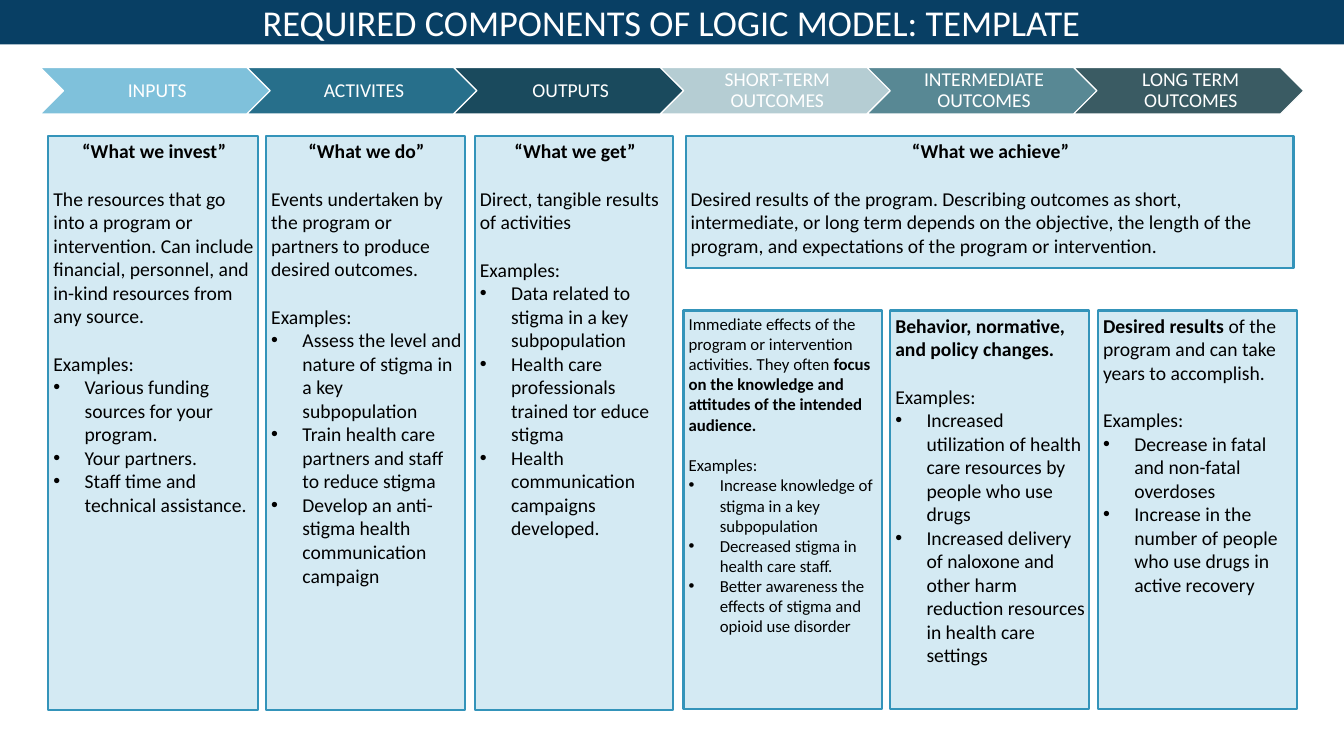
from lxml import etree
from pptx import Presentation
from pptx.dml.color import RGBColor
from pptx.enum.shapes import MSO_SHAPE
from pptx.enum.text import MSO_ANCHOR, PP_ALIGN
from pptx.oxml.ns import qn
from pptx.util import Inches, Pt

RECT, CHEVRON = MSO_SHAPE.RECTANGLE, MSO_SHAPE.CHEVRON
TOP, MIDDLE = MSO_ANCHOR.TOP, MSO_ANCHOR.MIDDLE
LEFT, CENTER = PP_ALIGN.LEFT, PP_ALIGN.CENTER

# Content
TITLE = "REQUIRED COMPONENTS OF LOGIC MODEL: TEMPLATE"
STEPS = [
    ("INPUTS", "7FC1DB"),
    ("ACTIVITES", "276F8B"),
    ("OUTPUTS", "1A4A5D"),
    ("SHORT-TERM OUTCOMES", "B5CDD3"),
    ("INTERMEDIATE OUTCOMES", "588894"),
    ("LONG TERM OUTCOMES", "3A5B63"),
]
# Each card: box, text size, heading, lead as (text, bold) runs, examples
CARDS = [
    ((0.48, 1.35, 2.08, 5.69), 14, "“What we invest”",
     [("The resources that go into a program or intervention. Can include "
       "financial, personnel, and in-kind resources from any source.", False)],
     ["Various funding sources for your program.",
      "Your partners.",
      "Staff time and technical assistance."]),
    ((2.64, 1.35, 1.97, 5.69), 14, "“What we do”",
     [("Events undertaken by the program or partners to produce desired "
       "outcomes.", False)],
     ["Assess the level and nature of stigma in a key subpopulation",
      "Train health care partners and staff to reduce stigma",
      "Develop an anti-stigma health communication campaign"]),
    ((4.71, 1.35, 1.97, 5.69), 14, "“What we get”",
     [("Direct, tangible results of activities", False)],
     ["Data related to stigma in a key subpopulation",
      "Health care professionals trained tor educe stigma",
      "Health communication campaigns developed."]),
    ((6.8, 1.35, 6.03, 1.31), 14, "“What we achieve”",
     [("Desired results of the program. Describing outcomes as short, "
       "intermediate, or long term depends on the objective, the length of "
       "the program, and expectations of the program or intervention.",
       False)],
     []),
    ((6.78, 3.08, 1.97, 3.95), 12, "",
     [("Immediate effects of the program or intervention activities. They "
       "often ", False),
      ("focus on the knowledge and attitudes of the intended audience.",
       True)],
     ["Increase knowledge of stigma in a key subpopulation",
      "Decreased stigma in health care staff.",
      "Better awareness the effects of stigma and opioid use disorder"]),
    ((8.83, 3.08, 1.97, 3.95), 14, "",
     [("Behavior, normative, and policy changes.", True)],
     ["Increased utilization of health care resources by people who use drugs",
      "Increased delivery of naloxone and other harm reduction resources in "
      "health care settings"]),
    ((10.89, 3.08, 1.97, 3.95), 14, "",
     [("Desired results ", True),
      ("of the program and can take years to accomplish.", False)],
     ["Decrease in fatal and non-fatal overdoses",
      "Increase in the number of people who use drugs in active recovery"]),
]
HUES = {"bar": "083F64", "card": "D4EAF3", "edge": "3494BA",
        "white": "FFFFFF", "black": "000000"}
FONT = "Calibri"
LINE = 1.22  # height of one text line, in font sizes


def paint(shape, fill, edge=None, width=0):
    shape.fill.solid()
    shape.fill.fore_color.rgb = RGBColor.from_string(fill)
    if edge:
        shape.line.color.rgb = RGBColor.from_string(edge)
        shape.line.width = Pt(width)
    else:
        shape.line.fill.background()


def set_frame(frame, anchor, pads):
    sides = ("left", "top", "right", "bottom")
    form = {"margin_" + s: Inches(p) for s, p in zip(sides, pads)}
    form.update(word_wrap=True, vertical_anchor=anchor)
    for key, value in form.items():
        setattr(frame, key, value)


def write(para, runs, size, hue, align=LEFT, gap=0):
    para.alignment = align
    para.space_before = Pt(gap)
    for text, bold in runs:
        run = para.add_run()
        run.text = text
        for key, value in {"name": FONT, "size": Pt(size), "bold": bold}.items():
            setattr(run.font, key, value)
        run.font.color.rgb = RGBColor.from_string(hue)


def add_bullet(para):
    props = para._p.get_or_add_pPr()
    props.set("marL", str(Inches(0.31)))
    props.set("indent", str(-Inches(0.31)))
    etree.SubElement(props, qn("a:buFont")).set("typeface", "Arial")
    etree.SubElement(props, qn("a:buChar")).set("char", "•")


def add_box(slide, kind, box):
    shape = slide.shapes.add_shape(kind, *map(Inches, box))
    shape.shadow.inherit = False
    return shape


def add_step(slide, index, text, fill):
    shape = add_box(slide, CHEVRON, (0.4 + 2.05 * index, 0.67, 2.28, 0.46))
    paint(shape, fill, HUES["white"], 0.85)
    set_frame(shape.text_frame, MIDDLE, (0.06, 0.02, 0.02, 0.02))
    para = shape.text_frame.paragraphs[0]
    write(para, [(text, False)], 14, HUES["white"], CENTER)
    para.line_spacing = 0.9


def add_card(slide, box, size, head, lead, items):
    shape = add_box(slide, RECT, box)
    paint(shape, HUES["card"], HUES["edge"], 1.5)
    frame = shape.text_frame
    set_frame(frame, TOP, (0.05, 0.03, 0.03, 0.03))
    gap = size * LINE
    para = frame.paragraphs[0]
    if head:
        write(para, [(head, True)], size, HUES["black"], CENTER)
        para = frame.add_paragraph()
    write(para, lead, size, HUES["black"], gap=gap if head else 0)
    if items:
        write(frame.add_paragraph(), [("Examples:", False)], size,
              HUES["black"], gap=gap)
    for item in items:
        para = frame.add_paragraph()
        write(para, [(item, False)], size, HUES["black"])
        add_bullet(para)


def main():
    deck = Presentation()
    deck.slide_width, deck.slide_height = Inches(13.33), Inches(7.5)
    slide = deck.slides.add_slide(deck.slide_layouts[5])

    # Title bar
    title = slide.shapes.title
    place = {"left": 0, "top": -0.01, "width": 13.33, "height": 0.45}
    for key, value in place.items():
        setattr(title, key, Inches(value))
    paint(title, HUES["bar"])
    set_frame(title.text_frame, MIDDLE, (0.1, 0.05, 0.1, 0.05))
    write(title.text_frame.paragraphs[0], [(TITLE, False)], 26,
          HUES["white"], CENTER)

    # Chevron row
    for index, (text, fill) in enumerate(STEPS):
        add_step(slide, index, text, fill)

    # Cards
    for card in CARDS:
        add_card(slide, *card)

    deck.save("out.pptx")


if __name__ == "__main__":
    main()
